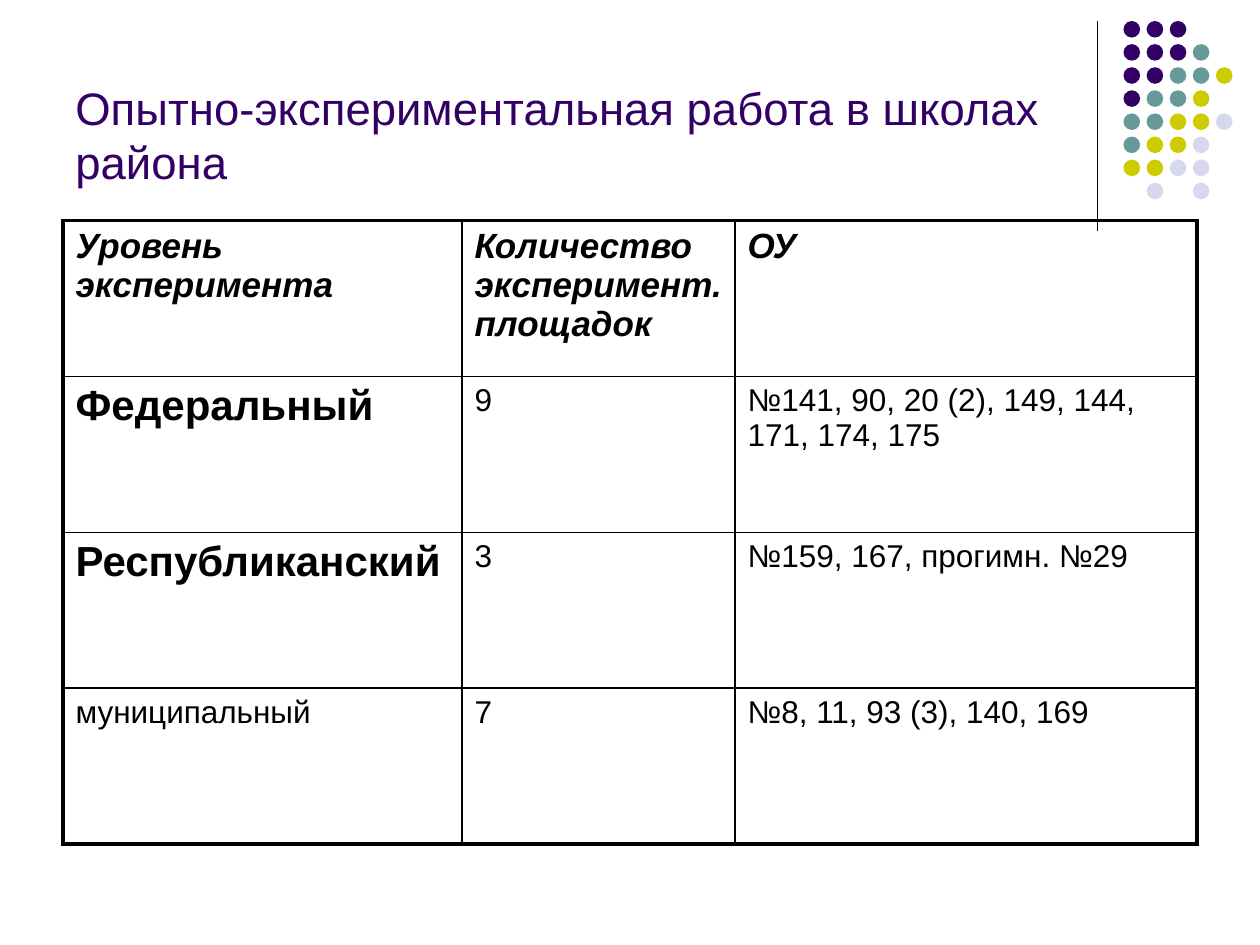
"""Build a slide with a table of experimental work in the district's schools."""
from dataclasses import dataclass

from lxml import etree
from pptx import Presentation
from pptx.dml.color import RGBColor
from pptx.enum.shapes import MSO_CONNECTOR, MSO_SHAPE
from pptx.enum.text import MSO_ANCHOR
from pptx.oxml.ns import qn
from pptx.util import Pt

OVAL = MSO_SHAPE.OVAL
STRAIGHT = MSO_CONNECTOR.STRAIGHT
BOTTOM = MSO_ANCHOR.BOTTOM


@dataclass(frozen=True)
class Theme:
    font: str = "Arial"
    text: str = "000000"
    purple: str = "330066"
    teal: str = "669999"
    olive: str = "CCCC00"
    lavender: str = "D8D8EC"
    title_size: int = 26
    level_size: int = 24
    header_size: int = 20
    body_size: int = 18
    thin: float = 1
    thick: float = 2.25
    rule: float = 0.75


class SlideBuilder:
    def __init__(self, slide, theme):
        self.slide = slide
        self.theme = theme

    def style_text(self, text_frame, text, size, color, bold=False, italic=False):
        text_frame.text = text
        font = text_frame.paragraphs[0].font
        font.name = self.theme.font
        font.size = Pt(size)
        font.bold = bold
        font.italic = italic
        font.color.rgb = RGBColor.from_string(color)

    def title(self, text, left, top, width, height):
        box = self.slide.shapes.add_textbox(Pt(left), Pt(top), Pt(width), Pt(height))
        text_frame = box.text_frame
        text_frame.word_wrap = True
        text_frame.vertical_anchor = BOTTOM
        self.style_text(text_frame, text, self.theme.title_size, self.theme.purple)

    def vertical_rule(self, left, top, bottom):
        line = self.slide.shapes.add_connector(
            STRAIGHT, Pt(left), Pt(top), Pt(left), Pt(bottom))
        line.line.color.rgb = RGBColor.from_string(self.theme.text)
        line.line.width = Pt(self.theme.rule)
        etree.SubElement(line._element.spPr, qn("a:effectLst"))

    def dot_grid(self, pattern, left, top, pitch, diameter):
        colors = {"P": self.theme.purple, "T": self.theme.teal,
                  "O": self.theme.olive, "L": self.theme.lavender}
        group = self.slide.shapes.add_group_shape()
        for row, codes in enumerate(pattern):
            for column, code in enumerate(codes):
                if code not in colors:
                    continue
                dot = group.shapes.add_shape(
                    OVAL, Pt(left + column * pitch), Pt(top + row * pitch),
                    Pt(diameter), Pt(diameter))
                dot.shadow.inherit = False
                dot.fill.solid()
                dot.fill.fore_color.rgb = RGBColor.from_string(colors[code])
                dot.line.fill.background()

    def cell_border(self, cell, side, width):
        properties = cell._tc.get_or_add_tcPr()
        border = etree.SubElement(properties, qn(f"a:ln{side}"), w=str(Pt(width)))
        fill = etree.SubElement(border, qn("a:solidFill"))
        etree.SubElement(fill, qn("a:srgbClr"), val=self.theme.text)

    def table(self, rows, left, top, column_widths, row_height):
        theme = self.theme
        last_row, last_column = len(rows) - 1, len(column_widths) - 1
        table = self.slide.shapes.add_table(
            len(rows), len(column_widths), Pt(left), Pt(top),
            Pt(sum(column_widths)), Pt(row_height * len(rows))).table
        table.first_row = False
        table.horz_banding = False
        for column, width in zip(table.columns, column_widths):
            column.width = Pt(width)
        for r, texts in enumerate(rows):
            table.rows[r].height = Pt(row_height)
            for c, text in enumerate(texts):
                cell = table.cell(r, c)
                is_header = r == 0
                is_level = c == 0 and 0 < r < last_row
                size = (theme.header_size if is_header
                        else theme.level_size if is_level else theme.body_size)
                self.style_text(cell.text_frame, text, size, theme.text,
                                bold=is_header or is_level, italic=is_header)
                outer_sides = {"L": c == 0, "R": c == last_column,
                               "T": r == 0, "B": r == last_row}
                for side, is_outer in outer_sides.items():
                    self.cell_border(cell, side, theme.thick if is_outer else theme.thin)
                cell.fill.background()


def main():
    presentation = Presentation()
    presentation.slide_width = Pt(720)
    presentation.slide_height = Pt(540)
    slide = presentation.slides.add_slide(presentation.slide_layouts[6])
    builder = SlideBuilder(slide, Theme())

    builder.vertical_rule(627, 12, 132)
    dots = ["PPP", "PPPT", "PPTTO", "PTTO", "TTOOL", "TOOL", "OOLL", ".L.L"]
    builder.dot_grid(dots, left=642, top=12, pitch=13.2, diameter=9.5)
    builder.title("Опытно-экспериментальная работа в школах района", 36, 9.5, 594, 102)
    rows = [
        ("Уровень эксперимента", "Количество эксперимент. площадок", "ОУ"),
        ("Федеральный", "9", "№141, 90, 20 (2), 149, 144, 171, 174, 175"),
        ("Республиканский", "3", "№159, 167, прогимн. №29"),
        ("муниципальный", "7", "№8, 11, 93 (3), 140, 169"),
    ]
    builder.table(rows, left=36, top=126, column_widths=(228, 156, 264), row_height=89.1)
    presentation.save("out.pptx")


if __name__ == "__main__":
    main()
